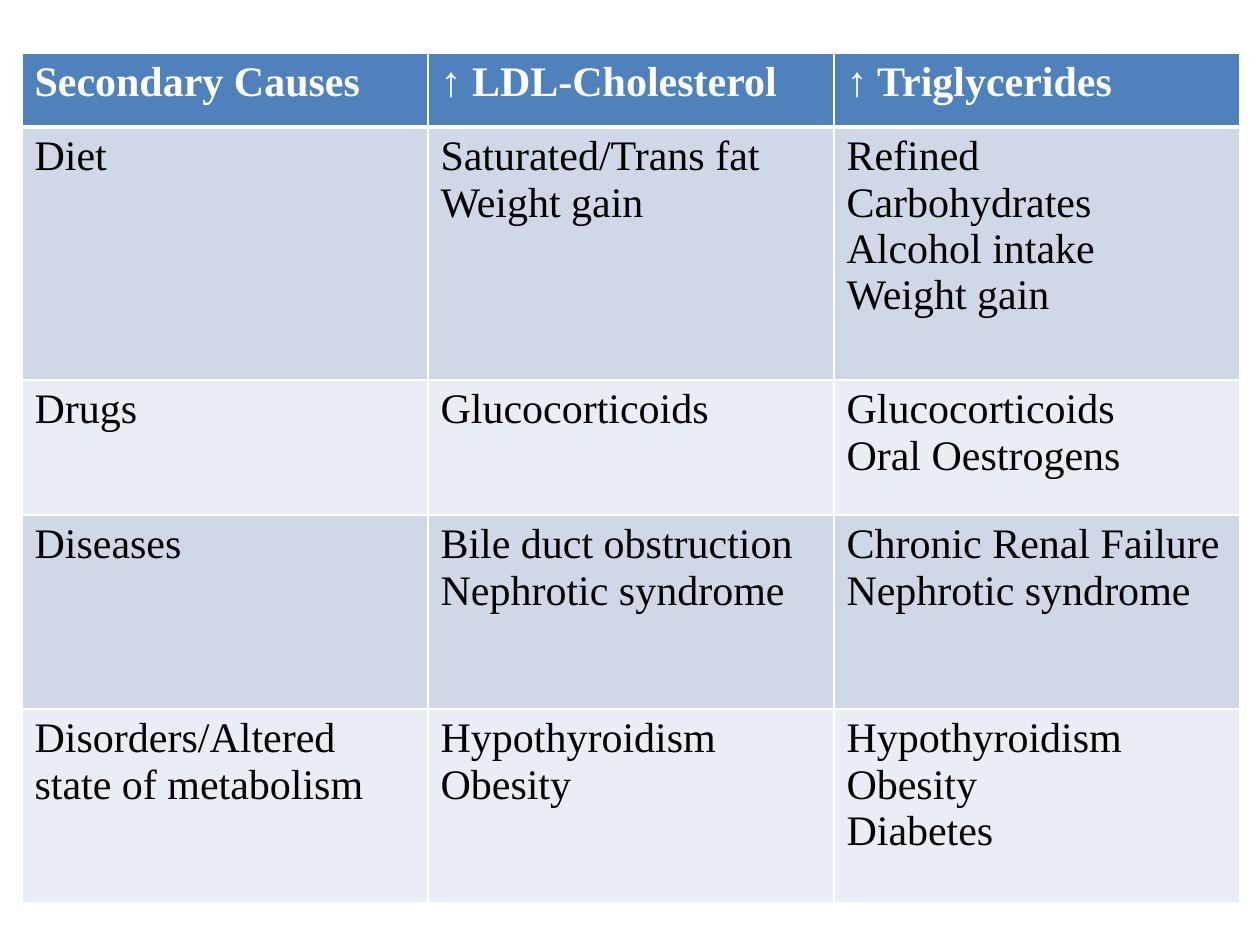
from dataclasses import dataclass

from lxml import etree
from pptx import Presentation
from pptx import util as u
from pptx.dml.color import RGBColor
from pptx.oxml import ns


@dataclass(frozen=True)
class Theme:
    header: str = "4F81BD"
    bands: tuple = ("D0D8E8", "E9EDF4")
    header_ink: str = "FFFFFF"
    ink: str = "000000"
    rule: str = "FFFFFF"
    font: str = "Times New Roman"
    size: int = 24


theme = Theme()


def px(length):
    return u.Emu(round(length * 914400 / 126))


def add_border(cell, position, side, points):
    line = etree.Element(ns.qn(f"a:ln{side}"), w=str(u.Pt(points)))
    fill = etree.SubElement(line, ns.qn("a:solidFill"))
    etree.SubElement(fill, ns.qn("a:srgbClr"), val=theme.rule)
    cell._tc.get_or_add_tcPr().insert(position, line)


causes = [
    (74, ["Secondary Causes"], ["↑ LDL-Cholesterol"], ["↑ Triglycerides"]),
    (253, ["Diet"], ["Saturated/Trans fat", "Weight gain"],
     ["Refined Carbohydrates", "Alcohol intake", "Weight gain"]),
    (135, ["Drugs"], ["Glucocorticoids"], ["Glucocorticoids", "Oral Oestrogens"]),
    (194, ["Diseases"], ["Bile duct obstruction", "Nephrotic syndrome"],
     ["Chronic Renal Failure", "Nephrotic syndrome"]),
    (194, ["Disorders/Altered state of metabolism"], ["Hypothyroidism", "Obesity"],
     ["Hypothyroidism", "Obesity", "Diabetes"]),
]
column_width = 406
column_count = 3

deck = Presentation()
deck.slide_width, deck.slide_height = px(1260), px(945)
slide = deck.slides.add_slide(deck.slide_layouts[6])

total_height = sum(height for height, *_ in causes)
grid = slide.shapes.add_table(
    len(causes), column_count, px(22), px(53),
    px(column_width * column_count), px(total_height),
).table
for column in grid.columns:
    column.width = px(column_width)

for r, (height, *entries) in enumerate(causes):
    grid.rows[r].height = px(height)
    is_header = r == 0
    background = theme.header if is_header else theme.bands[(r - 1) % 2]
    ink = theme.header_ink if is_header else theme.ink
    rules = {"L": 1, "R": 1, "T": 3 if r == 1 else 1, "B": 3 if is_header else 1}
    for c, lines in enumerate(entries):
        cell = grid.cell(r, c)
        cell.fill.solid()
        cell.fill.fore_color.rgb = RGBColor.from_string(background)
        for position, (side, points) in enumerate(rules.items()):
            add_border(cell, position, side, points)
        for i, line in enumerate(lines):
            frame = cell.text_frame
            paragraph = frame.add_paragraph() if i else frame.paragraphs[0]
            run = paragraph.add_run()
            run.text = line
            run.font.name = theme.font
            run.font.size = u.Pt(theme.size)
            run.font.bold = is_header
            run.font.color.rgb = RGBColor.from_string(ink)

deck.save("out.pptx")
